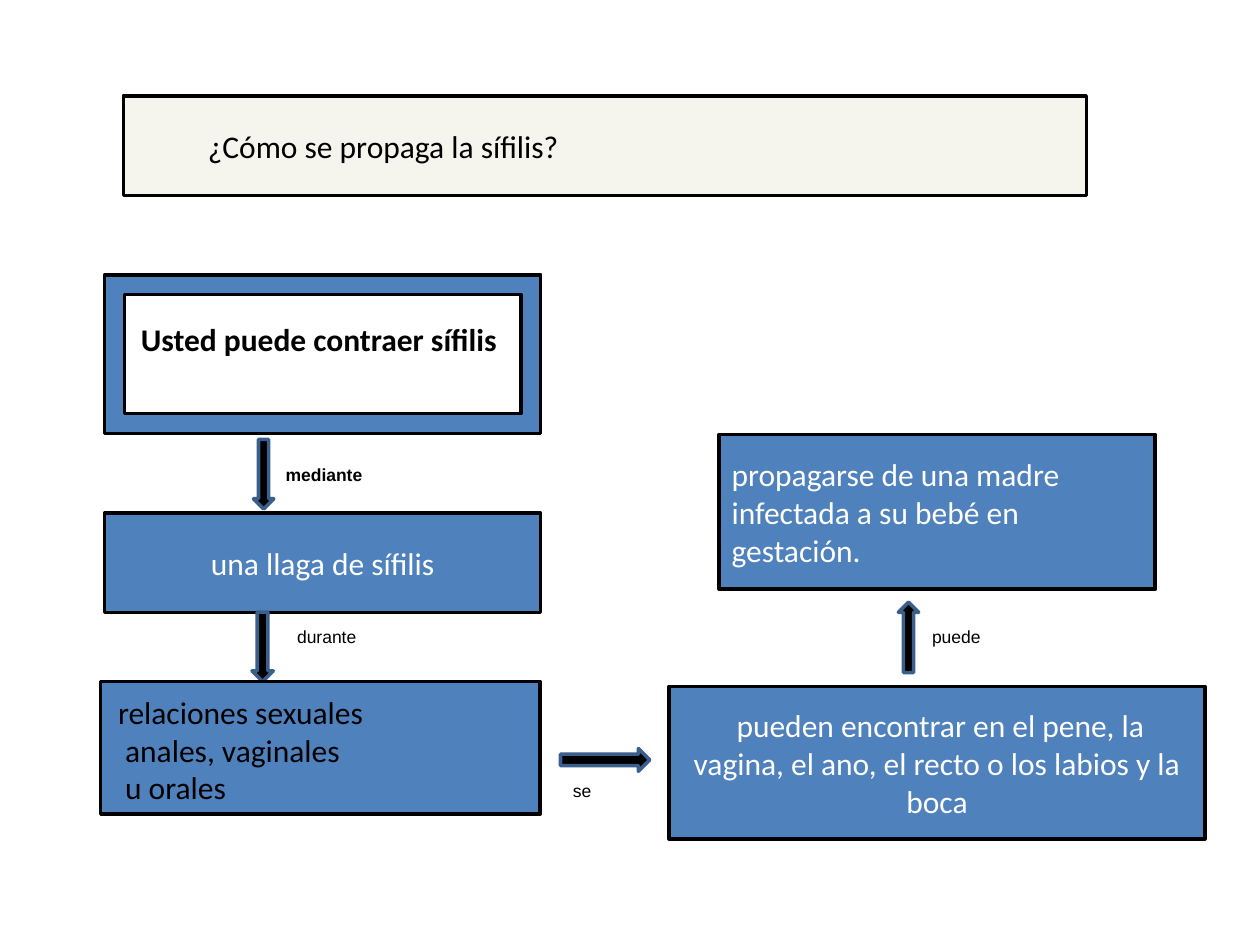
import dataclasses

import lxml.etree
import pptx
import pptx.dml.color
import pptx.enum.shapes
import pptx.enum.text
import pptx.oxml.ns
import pptx.util

Cm = pptx.util.Cm
Kind = pptx.enum.shapes.MSO_SHAPE
Align = pptx.enum.text.PP_ALIGN
Anchor = pptx.enum.text.MSO_ANCHOR
AutoSize = pptx.enum.text.MSO_AUTO_SIZE


@dataclasses.dataclass(frozen=True)
class Theme:
    black: str = "000000"
    white: str = "FFFFFF"
    blue: str = "4F81BD"
    arrow_edge: str = "3A5F8C"
    ivory: str = "F5F4ED"
    body_font: str = "Calibri"
    link_font: str = "Arial"
    body_size: int = 18
    link_size: int = 10
    line_width: int = 2


def rgb(code):
    return pptx.dml.color.RGBColor.from_string(code)


class ConceptMap:
    """Draws the parts of a concept map; every place is (left, top, width, height) in cm."""

    def __init__(self, slide, theme):
        self.slide = slide
        self.theme = theme

    def paint(self, shape, fill, edge):
        shape.fill.solid()
        shape.fill.fore_color.rgb = rgb(fill)
        shape.line.color.rgb = rgb(edge)
        shape.line.width = pptx.util.Pt(self.theme.line_width)

    def add_lines(self, frame, lines, color, align=Align.LEFT, link=False, bold=False):
        theme = self.theme
        frame.word_wrap = True
        for index, line in enumerate(lines):
            paragraph = frame.add_paragraph() if index else frame.paragraphs[0]
            paragraph.alignment = align
            run = paragraph.add_run()
            run.text = line
            run.font.name = theme.link_font if link else theme.body_font
            run.font.size = pptx.util.Pt(theme.link_size if link else theme.body_size)
            run.font.bold = bold
            run.font.color.rgb = rgb(color)

    def title(self, place, text):
        """Shapes the title placeholder as a cube and fills in its text."""
        title = self.slide.shapes.title
        title.left, title.top, title.width, title.height = map(Cm, place)
        qn = pptx.oxml.ns.qn
        geometry = lxml.etree.SubElement(title.element.spPr, qn("a:prstGeom"), prst="cube")
        lxml.etree.SubElement(geometry, qn("a:avLst"))
        self.paint(title, self.theme.ivory, self.theme.black)
        frame = title.text_frame
        frame.auto_size = AutoSize.NONE
        frame.vertical_anchor = Anchor.MIDDLE
        frame.margin_left = Cm(1.7)
        self.add_lines(frame, [text], self.theme.black)

    def shape(self, kind, place, fill, edge):
        shape = self.slide.shapes.add_shape(kind, *map(Cm, place))
        shape.shadow.inherit = False
        self.paint(shape, fill, edge)
        return shape

    def box(self, place, text=None, align=Align.CENTER, kind=Kind.RECTANGLE):
        box = self.shape(kind, place, self.theme.blue, self.theme.black)
        if text:
            box.text_frame.vertical_anchor = Anchor.MIDDLE
            self.add_lines(box.text_frame, [text], self.theme.white, align)

    def arrow(self, kind, place):
        self.shape(kind, place, self.theme.black, self.theme.arrow_edge)

    def label(self, place, *lines, link=False, bold=False):
        frame = self.slide.shapes.add_textbox(*map(Cm, place)).text_frame
        frame.auto_size = AutoSize.SHAPE_TO_FIT_TEXT
        self.add_lines(frame, lines, self.theme.black, link=link, bold=bold)


def main():
    deck = pptx.Presentation()
    deck.slide_width, deck.slide_height = Cm(25.4), Cm(19.05)
    title_only = deck.slide_layouts[5]
    concepts = ConceptMap(deck.slides.add_slide(title_only), Theme())

    concepts.title((2.49, 1.93, 19.41, 2.01), "¿Cómo se propaga la sífilis?")

    # Left column: from contagion to the kind of contact
    concepts.box((2.11, 5.54, 8.79, 3.2), kind=Kind.FRAME)
    concepts.label((2.59, 6.32, 8.61, 1.02), "Usted puede contraer sífilis", bold=True)
    concepts.arrow(Kind.DOWN_ARROW, (5.11, 8.86, 0.41, 1.4))
    concepts.label((5.51, 9.22, 3.2, 0.69), "mediante", link=True, bold=True)
    concepts.box((2.11, 10.34, 8.79, 2.01), "una llaga de sífilis")
    concepts.arrow(Kind.DOWN_ARROW, (5.08, 12.34, 0.43, 1.4))
    concepts.label((5.74, 12.5, 2.79, 0.69), "durante", link=True)
    concepts.box((2.03, 13.74, 8.86, 2.67))
    concepts.label((2.13, 13.84, 12.7, 2.57),
                   "relaciones sexuales", " anales, vaginales", " u orales")

    # Right column: where sores appear and how a baby is infected
    concepts.arrow(Kind.RIGHT_ARROW, (11.3, 15.09, 1.8, 0.46))
    concepts.label((11.3, 15.6, 1.8, 0.69), "se", link=True)
    concepts.box((13.49, 13.84, 10.8, 3.07),
                 " pueden encontrar en el pene, la vagina, el ano, el recto o los labios y la boca")
    concepts.arrow(Kind.UP_ARROW, (18.11, 12.14, 0.41, 1.42))
    concepts.label((18.54, 12.5, 3.4, 0.69), "puede", link=True)
    concepts.box((14.5, 8.76, 8.79, 3.12),
                 "propagarse de una madre infectada a su bebé en gestación.", Align.LEFT)

    deck.save("out.pptx")


if __name__ == "__main__":
    main()
